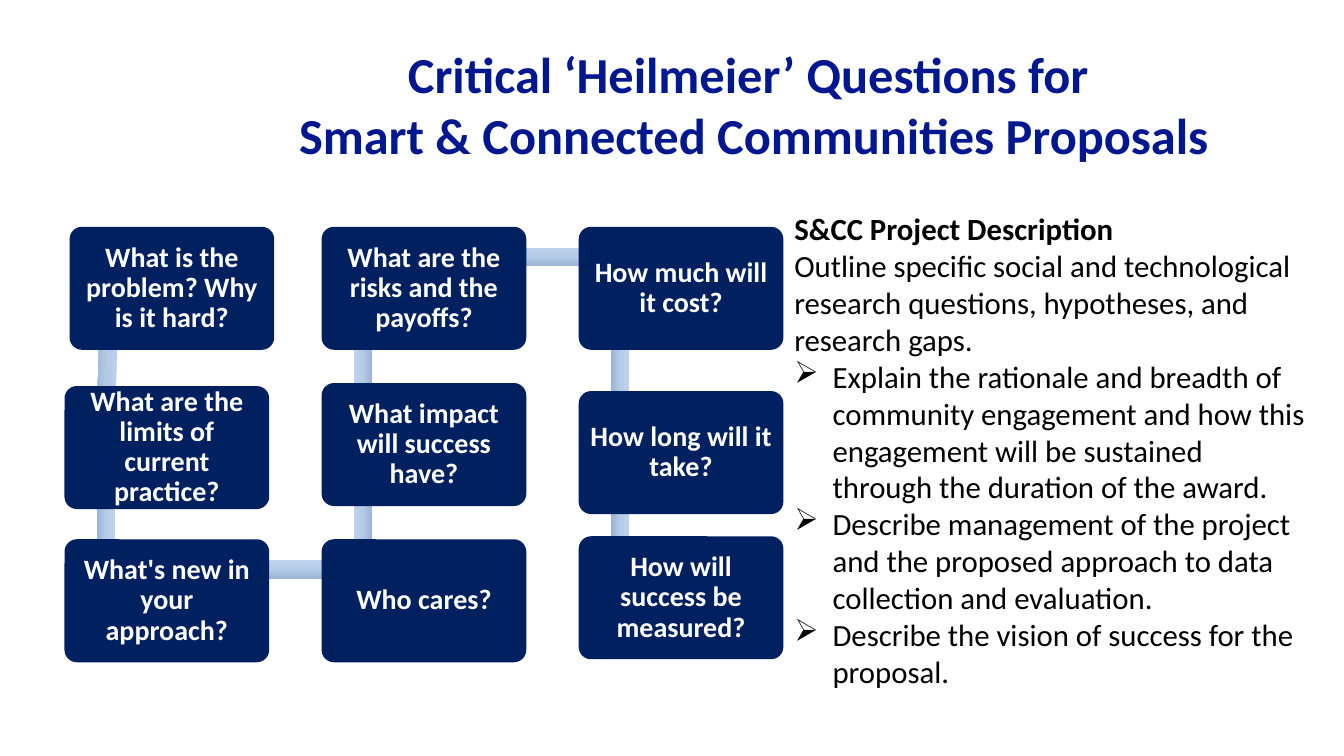
from copy import deepcopy
from dataclasses import dataclass
from itertools import pairwise
from math import atan2, degrees, hypot

from lxml import etree
from pptx import Presentation
from pptx.dml.color import RGBColor
from pptx.enum.shapes import MSO_SHAPE
from pptx.enum.text import MSO_ANCHOR, PP_ALIGN
from pptx.oxml.ns import qn
from pptx.util import Inches, Pt

RECTANGLE = MSO_SHAPE.RECTANGLE
ROUNDED = MSO_SHAPE.ROUNDED_RECTANGLE
LEFT, CENTER = PP_ALIGN.LEFT, PP_ALIGN.CENTER
MIDDLE = MSO_ANCHOR.MIDDLE


@dataclass(frozen=True)
class Theme:
    font: str = "Calibri"
    title_color: str = "011790"
    body_color: str = "000000"
    card_fill: str = "002060"
    card_color: str = "FFFFFF"
    bar_stops: tuple = ((0, "C0D2EB"), (0.5, "B3CBE9"), (1, "9BB4D3"))
    title_size: int = 36
    body_size: int = 22
    card_size: int = 20


THEME = Theme()

GRID_LEFT, GRID_TOP = 0.64, 2.25
COLUMN_PITCH, ROW_PITCH = 2.55, 1.55
CARD_WIDTH, CARD_HEIGHT = 2.03, 1.22
ANCHOR_X, ANCHOR_Y = 0.41, 0.3
BAR_THICKNESS = 0.18
BULLET_INDENT = 0.38

CARDS = [
    ("What is the problem? Why is it hard?", 0, 0, 0.05, 0),
    ("What are the limits of current practice?", 0, 1, 0, 0.03),
    ("What's new in your approach?", 0, 2, 0, 0),
    ("Who cares?", 1, 2, 0, 0),
    ("What impact will success have?", 1, 1, 0, 0),
    ("What are the risks and the payoffs?", 1, 0, 0, 0),
    ("How much will it cost?", 2, 0, 0, 0),
    ("How long will it take?", 2, 1, 0, 0.08),
    ("How will success be measured?", 2, 2, 0, -0.03),
]

TITLE = ["Critical ‘Heilmeier’ Questions for ", "Smart & Connected Communities Proposals"]
HEADING = "S&CC Project Description"
OUTLINE = (
    "Outline specific social and technological research questions, "
    "hypotheses, and research gaps."
)
TASKS = [
    "Explain the rationale and breadth of community engagement and how this "
    "engagement will be sustained through the duration of the award.",
    "Describe management of the project and the proposed approach to data "
    "collection and evaluation.",
    "Describe the vision of success for the proposal.",
]


def add_bullet(para, symbol):
    properties = para._p.get_or_add_pPr()
    properties.set("marL", str(Inches(BULLET_INDENT)))
    properties.set("indent", str(-Inches(BULLET_INDENT)))
    etree.SubElement(properties, qn("a:buChar")).set("char", symbol)


def write(frame, text, *, size, color, bold=False, align=LEFT, spacing=None, bullet=None):
    para = frame.paragraphs[0]
    if para.runs:
        para = frame.add_paragraph()
    para.alignment = align
    if spacing:
        para.line_spacing = spacing
    if bullet:
        add_bullet(para, bullet)
    span = para.add_run()
    span.text = text
    span.font.name = THEME.font
    span.font.size = Pt(size)
    span.font.bold = bold
    span.font.color.rgb = RGBColor.from_string(color)


def add_text_frame(page, left, top, width, height):
    box = page.shapes.add_textbox(*map(Inches, (left, top, width, height)))
    box.text_frame.word_wrap = True
    return box.text_frame


def add_plain_shape(page, kind, left, top, width, height):
    shape = page.shapes.add_shape(kind, *map(Inches, (left, top, width, height)))
    shape.shadow.inherit = False
    shape.line.fill.background()
    return shape


def card_corner(column, row, shift_x, shift_y):
    left = GRID_LEFT + column * COLUMN_PITCH + shift_x
    top = GRID_TOP + row * ROW_PITCH + shift_y
    return left, top


def add_bar(page, start, end):
    run_x, run_y = end[0] - start[0], end[1] - start[1]
    length = hypot(run_x, run_y)
    left = (start[0] + end[0] - length) / 2 + ANCHOR_X
    top = (start[1] + end[1] - BAR_THICKNESS) / 2 + ANCHOR_Y
    bar = add_plain_shape(page, RECTANGLE, left, top, length, BAR_THICKNESS)
    bar.rotation = degrees(atan2(run_y, run_x)) % 360
    bar.fill.gradient()
    bar.fill.gradient_angle = 270
    stop_list = bar._element.spPr.find(qn("a:gradFill")).find(qn("a:gsLst"))
    stop_list.insert(1, deepcopy(stop_list[0]))
    for stop, (position, color) in zip(bar.fill.gradient_stops, THEME.bar_stops):
        stop.position = position
        stop.color.rgb = RGBColor.from_string(color)


def add_card(page, text, corner):
    card = add_plain_shape(page, ROUNDED, *corner, CARD_WIDTH, CARD_HEIGHT)
    card.adjustments[0] = 0.1
    card.fill.solid()
    card.fill.fore_color.rgb = RGBColor.from_string(THEME.card_fill)
    frame = card.text_frame
    frame.word_wrap = True
    frame.vertical_anchor = MIDDLE
    frame.margin_left = frame.margin_right = Inches(0.08)
    frame.margin_top = frame.margin_bottom = Inches(0.08)
    write(frame, text, size=THEME.card_size, color=THEME.card_color,
          bold=True, align=CENTER, spacing=0.9)


def add_title(page):
    frame = add_text_frame(page, 2.11, 0.38, 10.74, 1.31)
    for line in TITLE:
        write(frame, line, size=THEME.title_size, color=THEME.title_color,
              bold=True, align=CENTER)


def add_question_path(page):
    corners = [card_corner(*place) for _, *place in CARDS]
    for start, end in pairwise(corners):
        add_bar(page, start, end)
    for (text, *_), corner in zip(CARDS, corners):
        add_card(page, text, corner)


def add_description(page):
    frame = add_text_frame(page, 7.78, 2.03, 5.26, 4.91)
    style = {"size": THEME.body_size, "color": THEME.body_color}
    write(frame, HEADING, bold=True, **style)
    write(frame, OUTLINE, **style)
    for task in TASKS:
        write(frame, task, bullet="➢", **style)


def main():
    deck = Presentation()
    deck.slide_width, deck.slide_height = Inches(13.33), Inches(7.5)
    page = deck.slides.add_slide(deck.slide_layouts[6])
    add_title(page)
    add_question_path(page)
    add_description(page)
    deck.save("out.pptx")


if __name__ == "__main__":
    main()
